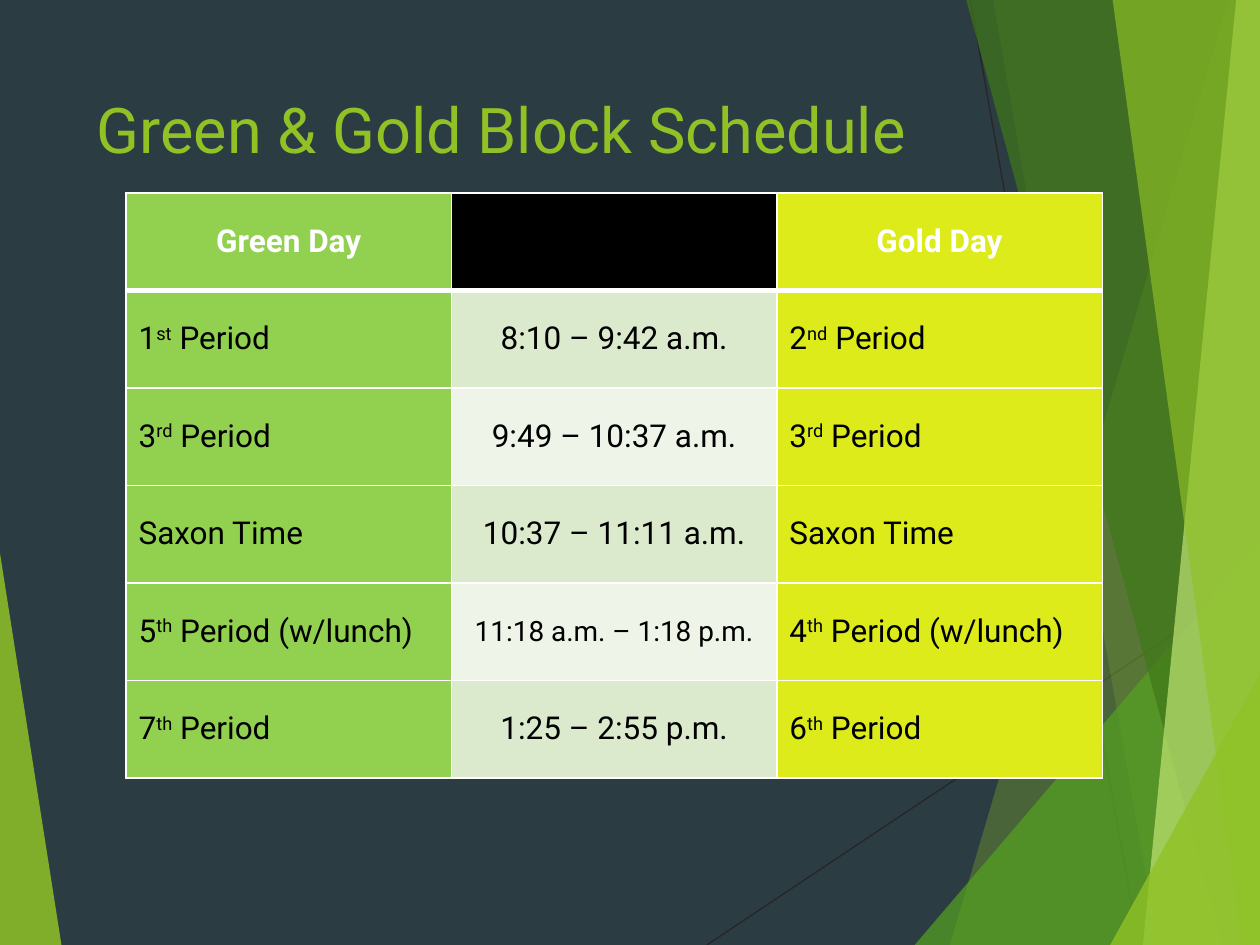
"""Build the Green & Gold block schedule slide."""
from dataclasses import dataclass

from lxml import etree
from pptx import Presentation
from pptx import util as u
from pptx.dml import color
from pptx.enum import shapes, text
from pptx.oxml import ns


@dataclass(frozen=True)
class Theme:
    font: str = "Roboto"
    background: str = "2C3C43"
    accent: str = "90C226"
    leaf: str = "54A021"
    forest: str = "3F7819"
    pale: str = "C0E474"
    hairline: str = "262626"
    green_day: str = "92D050"
    gold_day: str = "DCEB19"
    time_bands: tuple = ("DBE9CD", "EEF4E8")
    white: str = "FFFFFF"
    black: str = "000000"
    title_size: int = 36
    table_size: int = 18
    long_time_size: int = 16


THEME = Theme()
WIDTH, HEIGHT = 25.4, 19.05

HEADER = ("Green Day", "", "Gold Day")
SCHEDULE = [
    (("1", "st", " Period"), "8:10 – 9:42 a.m.", ("2", "nd", " Period")),
    (("3", "rd", " Period"), "9:49 – 10:37 a.m.", ("3", "rd", " Period")),
    (("Saxon Time",), "10:37 – 11:11 a.m.", ("Saxon Time",)),
    (("5", "th", " Period (w/lunch)"), "11:18 a.m. – 1:18 p.m.", ("4", "th", " Period (w/lunch)")),
    (("7", "th", " Period"), "1:25 – 2:55 p.m.", ("6", "th", " Period")),
]


def rgb(code):
    return color.RGBColor.from_string(code)


def style_font(font, size, code, bold=False):
    font.name, font.size, font.bold = THEME.font, u.Pt(size), bold
    font.color.rgb = rgb(code)


def add_hairline(slide, start, end):
    ends = [u.Cm(value) for value in (*start, *end)]
    hairline = slide.shapes.add_connector(shapes.MSO_CONNECTOR.STRAIGHT, *ends)
    hairline.line.color.rgb = rgb(THEME.hairline)
    hairline.line.width = u.Pt(0.75)
    etree.SubElement(hairline._element.spPr, ns.qn("a:effectLst"))


def add_facet(slide, corners, code, opacity):
    points = [(u.Cm(x), u.Cm(y)) for x, y in corners]
    builder = slide.shapes.build_freeform(*points[0])
    builder.add_line_segments(points[1:], close=True)
    facet = builder.convert_to_shape()
    facet.shadow.inherit = False
    facet.fill.solid()
    facet.fill.fore_color.rgb = rgb(code)
    facet.line.fill.background()
    tint = facet._element.spPr.find(".//" + ns.qn("a:srgbClr"))
    etree.SubElement(tint, ns.qn("a:alpha"), val=str(opacity * 1000))


def band(top_x, bottom_x):
    return [(top_x, 0), (bottom_x, HEIGHT), (WIDTH, HEIGHT), (WIDTH, 0)]


def wedge(left_x, top_y):
    return [(left_x, HEIGHT), (WIDTH, top_y), (WIDTH, HEIGHT)]


def add_backdrop(slide):
    slide.background.fill.solid()
    slide.background.fill.fore_color.rgb = rgb(THEME.background)
    add_hairline(slide, (14.25, HEIGHT), (WIDTH, 11.62))
    add_hairline(slide, (19.56, 0), (22.96, HEIGHT))
    facets = [
        ([(0, 11.15), (1.24, HEIGHT), (0, HEIGHT)], THEME.accent, 85),
        (band(24.77, 19.15), THEME.accent, 30),
        (band(20.02, 23.34), THEME.accent, 20),
        (wedge(18.44, 10.9), THEME.leaf, 72),
        (band(19.48, 24.64), THEME.forest, 70),
        (band(24.92, 23.04), THEME.pale, 70),
        (band(22.43, 25.04), THEME.accent, 65),
        (wedge(22.38, 13.59), THEME.accent, 80),
    ]
    for corners, code, opacity in facets:
        add_facet(slide, corners, code, opacity)


def add_title(slide):
    title = slide.shapes.add_textbox(u.Cm(1.7), u.Cm(1.7), u.Cm(17.63), u.Cm(3.66))
    title.text_frame.word_wrap = True
    title.text_frame.text = "Green & Gold Block Schedule"
    style_font(title.text_frame.paragraphs[0].runs[0].font, THEME.title_size, THEME.accent)


def set_borders(cell, top, bottom):
    properties = cell._tc.get_or_add_tcPr()
    for side, points in (("L", 1), ("R", 1), ("T", top), ("B", bottom)):
        border = etree.SubElement(properties, ns.qn(f"a:ln{side}"), w=str(u.Pt(points)))
        fill = etree.SubElement(border, ns.qn("a:solidFill"))
        etree.SubElement(fill, ns.qn("a:srgbClr"), val=THEME.white)


def fill_cell(cell, pieces, fill, size, code, bold, centred):
    cell.fill.solid()
    cell.fill.fore_color.rgb = rgb(fill)
    cell.vertical_anchor = text.MSO_ANCHOR.MIDDLE
    paragraph = cell.text_frame.paragraphs[0]
    if centred:
        paragraph.alignment = text.PP_ALIGN.CENTER
    for position, piece in enumerate(pieces):
        run = paragraph.add_run()
        run.text = piece
        style_font(run.font, size, code, bold)
        if position == 1:
            run._r.get_or_add_rPr().set("baseline", "30000")


def add_schedule(slide):
    row_count = len(SCHEDULE) + 1
    schedule = slide.shapes.add_table(
        row_count, 3, u.Cm(2.54), u.Cm(3.89), u.Cm(19.68), u.Cm(11.79)).table
    for column in schedule.columns:
        column.width = u.Cm(6.56)
    for row in schedule.rows:
        row.height = u.Cm(1.965)
    for column, (label, fill) in enumerate(
            zip(HEADER, (THEME.green_day, THEME.black, THEME.gold_day))):
        cell = schedule.cell(0, column)
        set_borders(cell, 1, 3)
        fill_cell(cell, (label,) if label else (), fill,
                  THEME.table_size, THEME.white, True, True)
    for row, (green, time, gold) in enumerate(SCHEDULE, start=1):
        time_fill = THEME.time_bands[(row - 1) % 2]
        time_size = THEME.long_time_size if len(time) > 20 else THEME.table_size
        entries = [
            (green, THEME.green_day, THEME.table_size, False),
            ((time,), time_fill, time_size, True),
            (gold, THEME.gold_day, THEME.table_size, False),
        ]
        for column, (pieces, fill, size, centred) in enumerate(entries):
            cell = schedule.cell(row, column)
            set_borders(cell, 3 if row == 1 else 1, 1)
            fill_cell(cell, pieces, fill, size, THEME.black, False, centred)


def main():
    deck = Presentation()
    deck.slide_width, deck.slide_height = u.Cm(WIDTH), u.Cm(HEIGHT)
    slide = deck.slides.add_slide(deck.slide_layouts[6])
    add_backdrop(slide)
    add_title(slide)
    add_schedule(slide)
    deck.save("out.pptx")


if __name__ == "__main__":
    main()
